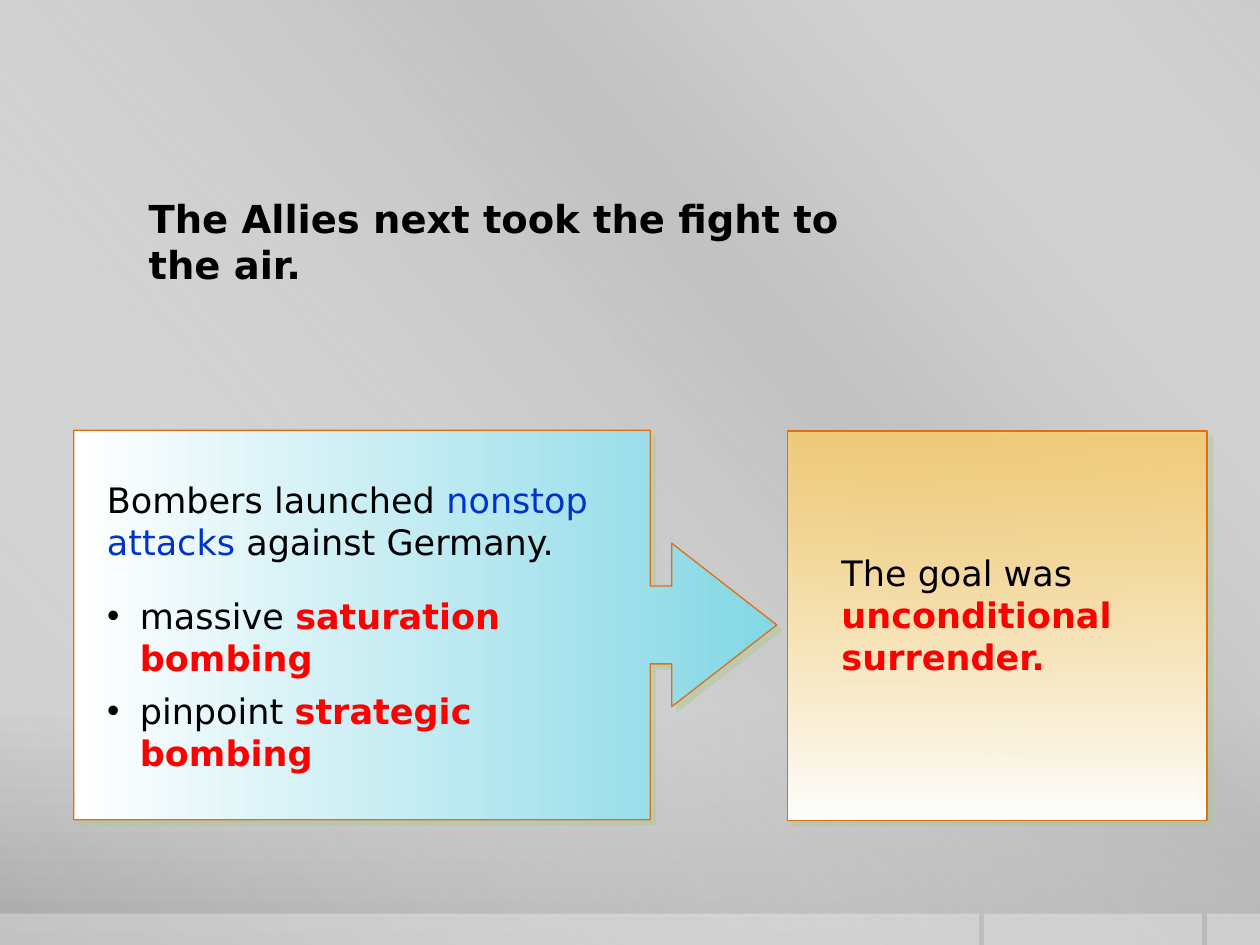
"""Build a slide on the Allied air war: bombing campaign leading to its goal."""
from lxml.etree import SubElement
from pptx import Presentation
from pptx.dml.color import RGBColor
from pptx.enum.shapes import MSO_SHAPE
from pptx.enum.text import MSO_ANCHOR, MSO_AUTO_SIZE, PP_ALIGN
from pptx.oxml.ns import qn
from pptx.util import Inches, Pt

COLORS = {
    "black": "000000", "red": "FF0000", "blue": "0033CC", "white": "FFFFFF",
    "orange": "DE7014", "shadow": "ADC793", "gold": "FFCC66", "cyan": "83D7E5",
    "light": "CBCBCB", "middle": "C8C8C8", "dark": "A7A7A7", "gray": "BFBFBF",
}
FONT = "DejaVu Sans"
WIDTH, HEIGHT = 10, 7.5

TITLE = [[("The Allies next took the fight to the air.", "black", True)]]
ATTACKS = [[("Bombers launched ", "black", False),
            ("nonstop attacks", "blue", False),
            (" against Germany.", "black", False)]]
BOMBING = [
    [("massive ", "black", False), ("saturation bombing", "red", True)],
    [("pinpoint ", "black", False), ("strategic bombing", "red", True)],
]
GOAL = [[("The goal was ", "black", False),
         ("unconditional surrender.", "red", True)]]

BACKGROUND_STOPS = [(0, "light", 100), (76, "middle", 100), (100, "dark", 100)]
SHEEN_STOPS = [(0, "white", 0), (34, "gray", 61), (38, "gray", 76), (100, "white", 0)]
GOAL_STOPS = [(0, "gold", 75), (100, "white", 100)]
CALLOUT_STOPS = [(0, "cyan", 100), (100, "white", 100)]
CALLOUT_ADJUSTMENTS = [0.2, 0.21, 0.27, 0.82]

PANEL_TOP, PANEL_HEIGHT = 3.42, 3.09
FLOOR_HEIGHT, FLOOR_GAP = 0.25, 0.04
FLOOR_WIDTHS = [7.77, 1.73, 0.42]


def rgb(name):
    return RGBColor.from_string(COLORS[name])


def add_color(parent, name, opacity):
    color = SubElement(parent, qn("a:srgbClr"), val=COLORS[name])
    if opacity < 100:
        SubElement(color, qn("a:alpha"), val=str(opacity * 1000))


def set_gradient(fill, holder, stops, angle):
    fill.gradient()
    gradient = holder.find(qn("a:gradFill"))
    for child in list(gradient):
        gradient.remove(child)
    stop_list = SubElement(gradient, qn("a:gsLst"))
    for position, name, opacity in stops:
        stop = SubElement(stop_list, qn("a:gs"), pos=str(position * 1000))
        add_color(stop, name, opacity)
    SubElement(gradient, qn("a:lin"), ang=str(angle * 60000), scaled="0")


def add_block(slide, kind, left, top, width, height):
    shape = slide.shapes.add_shape(
        kind, Inches(left), Inches(top), Inches(width), Inches(height))
    shape.shadow.inherit = False
    shape.line.fill.background()
    return shape


def style_panel(shape, stops):
    properties = shape.element.spPr
    set_gradient(shape.fill, properties, stops, 90)
    shape.line.color.rgb = rgb("orange")
    shape.line.width = Pt(0.75)
    shadow = SubElement(
        properties.find(qn("a:effectLst")), qn("a:outerShdw"),
        dist=str(Pt(4.2)), dir=str(45 * 60000), algn="ctr", rotWithShape="0")
    add_color(shadow, "shadow", 46)


def add_bullet(paragraph):
    properties = paragraph._p.get_or_add_pPr()
    properties.set("marL", str(Inches(0.26)))
    properties.set("indent", str(Inches(-0.26)))
    SubElement(properties, qn("a:buFont"), typeface="Arial")
    SubElement(properties, qn("a:buChar"), char="•")
    paragraph.space_after = Pt(6)


def write(shape, box, paragraphs, size=20, bulleted=False):
    shape.left, shape.top, shape.width, shape.height = map(Inches, box)
    frame = shape.text_frame
    frame.word_wrap = True
    frame.auto_size = MSO_AUTO_SIZE.SHAPE_TO_FIT_TEXT
    frame.vertical_anchor = MSO_ANCHOR.TOP
    for index, pieces in enumerate(paragraphs):
        paragraph = frame.add_paragraph() if index else frame.paragraphs[0]
        if bulleted:
            add_bullet(paragraph)
        paragraph.alignment = PP_ALIGN.LEFT
        paragraph.space_before = Pt(0)
        for text, color, bold in pieces:
            run = paragraph.add_run()
            run.text = text
            run.font.name = FONT
            run.font.size = Pt(size)
            run.font.bold = bold
            run.font.color.rgb = rgb(color)


def bring_to_front(shape):
    shape.element.getparent().append(shape.element)


def add_backdrop(slide):
    fill = slide.background.fill
    fill.solid()
    holder = slide.element.find(".//" + qn("p:bgPr"))
    set_gradient(fill, holder, BACKGROUND_STOPS, 90)
    sheen = add_block(slide, MSO_SHAPE.RECTANGLE, 0, 0, WIDTH, HEIGHT)
    set_gradient(sheen.fill, sheen.element.spPr, SHEEN_STOPS, 140)
    left = 0
    for width in FLOOR_WIDTHS:
        tile = add_block(slide, MSO_SHAPE.RECTANGLE, left,
                         HEIGHT - FLOOR_HEIGHT, width, FLOOR_HEIGHT)
        tile.fill.solid()
        tile.fill.fore_color.rgb = rgb("white")
        color = tile.element.spPr.find(".//" + qn("a:srgbClr"))
        SubElement(color, qn("a:alpha"), val="30000")
        left += width + FLOOR_GAP


def main():
    presentation = Presentation()
    presentation.slide_width, presentation.slide_height = Inches(WIDTH), Inches(HEIGHT)
    slide = presentation.slides.add_slide(presentation.slide_layouts[1])
    title, body = slide.shapes.title, slide.placeholders[1]
    add_backdrop(slide)

    bring_to_front(title)
    write(title, (1.08, 1.5, 5.83, 0.83), TITLE, size=22)

    goal = add_block(slide, MSO_SHAPE.RECTANGLE, 6.25, PANEL_TOP, 3.33, PANEL_HEIGHT)
    style_panel(goal, GOAL_STOPS)
    write(slide.shapes.add_textbox(0, 0, 0, 0), (6.58, 4.33, 2.75, 1.43), GOAL)

    callout = add_block(slide, MSO_SHAPE.UP_ARROW_CALLOUT, 1.83, 2.17, PANEL_HEIGHT, 5.58)
    callout.rotation = 90
    for index, value in enumerate(CALLOUT_ADJUSTMENTS):
        callout.adjustments[index] = value
    style_panel(callout, CALLOUT_STOPS)

    bring_to_front(body)
    write(body, (0.75, 4.67, 4.17, 1.53), BOMBING, bulleted=True)
    write(slide.shapes.add_textbox(0, 0, 0, 0), (0.75, 3.75, 4.1, 0.77), ATTACKS)
    presentation.save("out.pptx")


if __name__ == "__main__":
    main()
